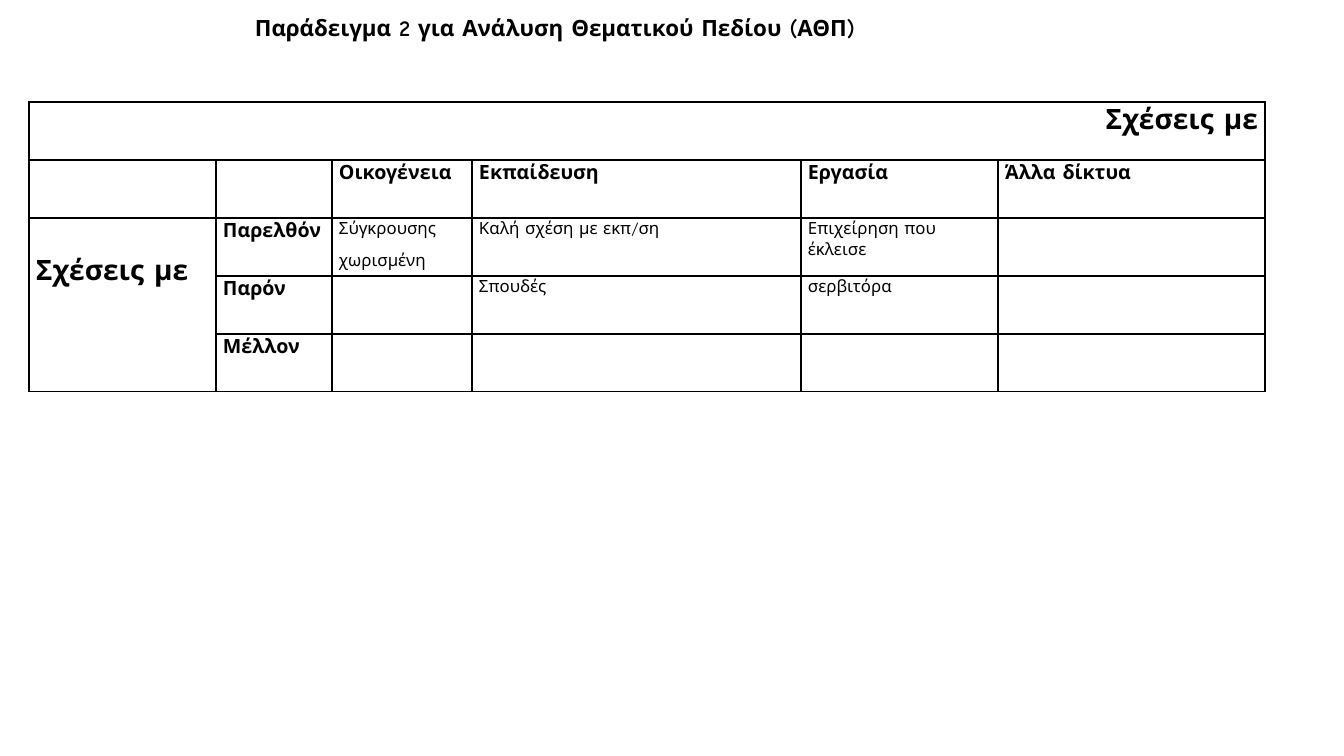
import pptx
import pptx.util
import pptx.dml.color
import pptx.enum.text
import pptx.oxml

FONT = "Comic Neue"
BLACK = "000000"
TITLE = "Παράδειγμα 2 για Ανάλυση Θεματικού Πεδίου (ΑΘΠ)"
TITLE_BOX = (245, 9, 681, 37)
TABLE_ORIGIN = (29, 102)
COLUMN_WIDTHS = [187, 116, 140, 329, 197, 267]
ROW_HEIGHT = 58
AXIS_LABEL_DROP = 35
ROWS = [
    ["Σχέσεις με", "", "", "", "", ""],
    ["", "", "Οικογένεια", "Εκπαίδευση", "Εργασία", "Άλλα δίκτυα"],
    ["Σχέσεις με", "Παρελθόν", "Σύγκρουσης\nχωρισμένη",
     "Καλή σχέση με εκπ/ση", "Επιχείρηση που έκλεισε", ""],
    ["", "Παρόν", "", "Σπουδές", "σερβιτόρα", ""],
    ["", "Μέλλον", "", "", "", ""],
]
MERGES = [((0, 0), (0, 5)), ((2, 0), (4, 0))]
STYLES = {
    "title": {"size": pptx.util.Pt(16), "bold": True},
    "axis": {"size": pptx.util.Pt(20), "bold": True},
    "heading": {"size": pptx.util.Pt(14), "bold": True},
    "entry": {"size": pptx.util.Pt(12), "bold": False},
}
CELL_MARGINS = {"margin_left": 7, "margin_right": 7, "margin_top": 0, "margin_bottom": 0}
CELL_SPACING = {"line_spacing": 1.07, "space_after": pptx.util.Pt(8)}
BORDER = (
    '<a:{side} xmlns:a="http://schemas.openxmlformats.org/drawingml/2006/main" w="12700">'
    '<a:solidFill><a:srgbClr val="{color}"/></a:solidFill></a:{side}>'
)


def px(length):
    return pptx.util.Emu(round(length * 914400 / 100.8))


def color(value):
    return pptx.dml.color.RGBColor.from_string(value)


def set_all(target, values):
    for name, value in values.items():
        setattr(target, name, value)


def write(para, text, style):
    span = para.add_run()
    span.text = text
    set_all(span.font, {"name": FONT, **STYLES[style]})
    span.font.color.rgb = color(BLACK)


def add_borders(cell):
    properties = cell._tc.get_or_add_tcPr()
    for index, side in enumerate(("lnL", "lnR", "lnT", "lnB")):
        properties.insert(index, pptx.oxml.parse_xml(BORDER.format(side=side, color=BLACK)))


def cell_style(row, column):
    if row == 0 or column == 0:
        return "axis"
    return "heading" if row == 1 or column == 1 else "entry"


def fill_cell(cell, text, style):
    cell.fill.background()
    add_borders(cell)
    set_all(cell, {name: px(value) for name, value in CELL_MARGINS.items()})
    if not text:
        return
    for index, line in enumerate(text.split("\n")):
        frame = cell.text_frame
        para = frame.add_paragraph() if index else frame.paragraphs[0]
        set_all(para, CELL_SPACING)
        write(para, line, style)


def add_title(page):
    box = page.shapes.add_textbox(*map(px, TITLE_BOX))
    box.text_frame.word_wrap = True
    para = box.text_frame.paragraphs[0]
    para.alignment = pptx.enum.text.PP_ALIGN.JUSTIFY
    write(para, TITLE, "title")


def add_relations_table(page):
    size = (sum(COLUMN_WIDTHS), ROW_HEIGHT * len(ROWS))
    frame = page.shapes.add_table(
        len(ROWS), len(COLUMN_WIDTHS), *map(px, TABLE_ORIGIN + size))
    table = frame.table
    set_all(table, {"first_row": False, "horz_banding": False})
    for column, width in zip(table.columns, COLUMN_WIDTHS):
        column.width = px(width)
    for row, texts in enumerate(ROWS):
        table.rows[row].height = px(ROW_HEIGHT)
        for column, text in enumerate(texts):
            fill_cell(table.cell(row, column), text, cell_style(row, column))
    for first, last in MERGES:
        table.cell(*first).merge(table.cell(*last))
    table.cell(0, 0).text_frame.paragraphs[0].alignment = pptx.enum.text.PP_ALIGN.RIGHT
    table.cell(2, 0).margin_top = px(AXIS_LABEL_DROP)


def main():
    deck = pptx.Presentation()
    set_all(deck, {"slide_width": px(1344), "slide_height": px(756)})
    page = deck.slides.add_slide(deck.slide_layouts[6])
    add_title(page)
    add_relations_table(page)
    deck.save("out.pptx")


if __name__ == "__main__":
    main()
